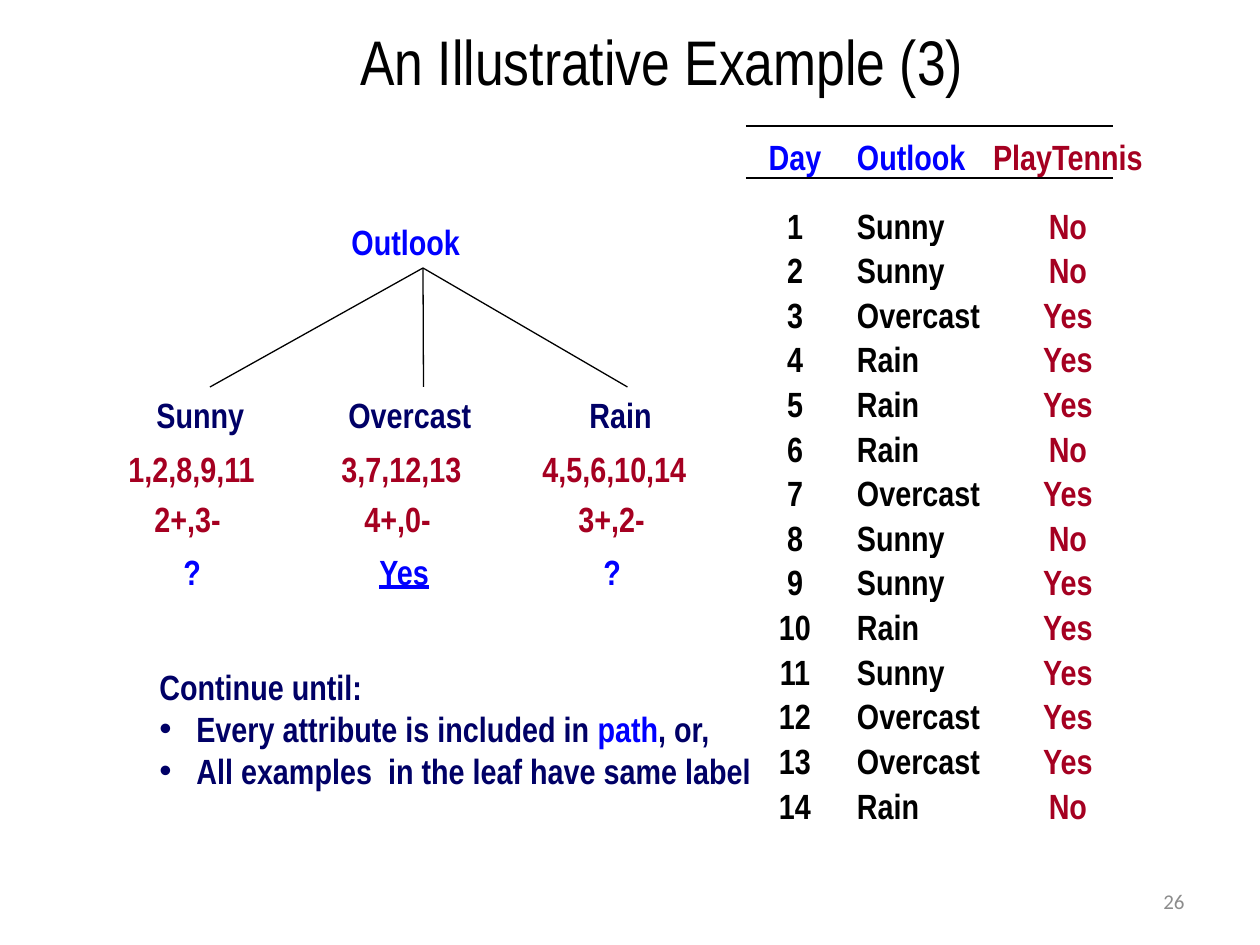
from lxml.etree import SubElement
from pptx import Presentation
from pptx.dml.color import RGBColor
from pptx.enum.shapes import MSO_CONNECTOR as CONN
from pptx.enum.text import MSO_ANCHOR as ANCHOR, PP_ALIGN as ALIGN
from pptx.oxml.ns import qn
from pptx.util import Emu, Pt

COLORS = {"black": "000000", "blue": "0000FF", "navy": "000066",
          "red": "A50021", "gray": "8C8C8C"}
BRANCHES = [
    [("Sunny", 144, 132), ("1,2,8,9,11", 116, 180), ("2+,3-", 142, 106), ("?", 171, 47)],
    [("Overcast", 336, 175), ("3,7,12,13", 329, 171), ("4+,0-", 352, 106), ("Yes", 367, 88)],
    [("Rain", 577, 101), ("4,5,6,10,14", 530, 200), ("3+,2-", 566, 106), ("?", 591, 57)],
]
LEVELS = [(387, "navy"), (441, "red"), (491, "red"), (544, "blue")]
HEADER = ("Day", "Outlook", "PlayTennis")
EXAMPLES = [
    ("Sunny", "No"), ("Sunny", "No"), ("Overcast", "Yes"), ("Rain", "Yes"),
    ("Rain", "Yes"), ("Rain", "No"), ("Overcast", "Yes"), ("Sunny", "No"),
    ("Sunny", "Yes"), ("Rain", "Yes"), ("Sunny", "Yes"), ("Overcast", "Yes"),
    ("Overcast", "Yes"), ("Rain", "No"),
]


def px(n):
    return Emu(round(n * 914400 / 126))


class SlideBuilder:
    """Holds the style and the current slide, and adds each kind of element."""

    def __init__(self, prs, font="Arial Narrow", size=20):
        self.slide = prs.slides.add_slide(prs.slide_layouts[6])
        self.font, self.size = font, size

    def style(self, p, color, size=None, bold=True, font=None, underline=None):
        for r in p.runs:
            f = r.font
            f.name, f.size, f.bold = font or self.font, Pt(size or self.size), bold
            f.underline = underline
            f.color.rgb = RGBColor.from_string(COLORS[color])

    def text(self, text, x, y, w, h, color, align=ALIGN.LEFT, **style):
        sp = self.slide.shapes.add_textbox(px(x), px(y), px(w), px(h))
        tf = sp.text_frame
        tf.word_wrap = True
        tf.vertical_anchor = ANCHOR.MIDDLE
        tf.text = text
        for p in tf.paragraphs:
            p.alignment = align
            self.style(p, color, **style)
        return sp

    def bullet(self, p, indent):
        pPr = p._p.get_or_add_pPr()
        pPr.set("marL", str(px(indent)))
        pPr.set("indent", str(-px(indent)))
        SubElement(pPr, qn("a:buFont")).set("typeface", "Arial")
        SubElement(pPr, qn("a:buChar")).set("char", "•")

    def line(self, x1, y1, x2, y2, begin=None, end=None):
        cxn = self.slide.shapes.add_connector(CONN.STRAIGHT, px(x1), px(y1), px(x2), px(y2))
        cxn.line.color.rgb = RGBColor.from_string(COLORS["black"])
        cxn.line.width = Pt(0.75)
        SubElement(cxn._element.spPr, qn("a:effectLst"))
        if begin:
            cxn.begin_connect(begin, 2)
        if end:
            cxn.end_connect(end, 0)

    def table(self, rows, x, y, widths, heights, colors, aligns, inset):
        frame = self.slide.shapes.add_table(
            len(rows), len(widths), px(x), px(y), px(sum(widths)), px(sum(heights)))
        tbl = frame.table
        tbl.first_row = tbl.horz_banding = False
        for col, w in zip(tbl.columns, widths):
            col.width = px(w)
        for i, row in enumerate(rows):
            tbl.rows[i].height = px(heights[i])
            for j, value in enumerate(row):
                cell = tbl.cell(i, j)
                cell.fill.background()
                cell.margin_top = cell.margin_bottom = cell.margin_right = 0
                cell.margin_left = px(inset if aligns[j] == ALIGN.LEFT else 0)
                cell.vertical_anchor = ANCHOR.BOTTOM
                p = cell.text_frame.paragraphs[0]
                p.text = value
                p.alignment = aligns[j]
                self.style(p, colors(i, j))


def cell_color(row, col):
    if col == 2:
        return "red"
    return "black" if row else "blue"


def main():
    prs = Presentation()
    prs.slide_width, prs.slide_height = px(1260), px(945)
    s = SlideBuilder(prs)

    s.text("26", 903, 876, 294, 50, "gray", ALIGN.RIGHT, size=12, bold=False, font="Calibri")
    s.text("An Illustrative Example (3)", 348, 16, 629, 88, "black", size=36, bold=False)

    root = s.text("Outlook", 339, 214, 168, 54, "blue")
    for branch in BRANCHES:
        nodes = [s.text(label, x, y, w, 54, color, underline=label == "Yes" or None)
                 for (label, x, w), (y, color) in zip(branch, LEVELS)]
        s.line(423, 268, 423, 387, root, nodes[0])

    bottoms = [126, 178] + [247 + 580 * i // 13 for i in range(len(EXAMPLES))]
    rows = [HEADER] + [(str(day), *ex) for day, ex in enumerate(EXAMPLES, 1)]
    s.table(rows, 746, 126, [98, 146, 156],
            [b - a for a, b in zip(bottoms, bottoms[1:])],
            cell_color, [ALIGN.CENTER, ALIGN.LEFT, ALIGN.CENTER], 13)
    for y in bottoms[:2]:
        s.line(746, y, 1113, y)

    rule = s.text("Continue until:\nEvery attribute is included in \n"
                  "All examples  in the leaf have same label", 147, 659, 721, 139, "navy")
    _, first, second = rule.text_frame.paragraphs
    for word in ("path", ", or,"):
        first.add_run().text = word
    s.style(first, "navy")
    first.runs[1].font.color.rgb = RGBColor.from_string(COLORS["blue"])
    for p in (first, second):
        s.bullet(p, 37)

    prs.save("out.pptx")


if __name__ == "__main__":
    main()
